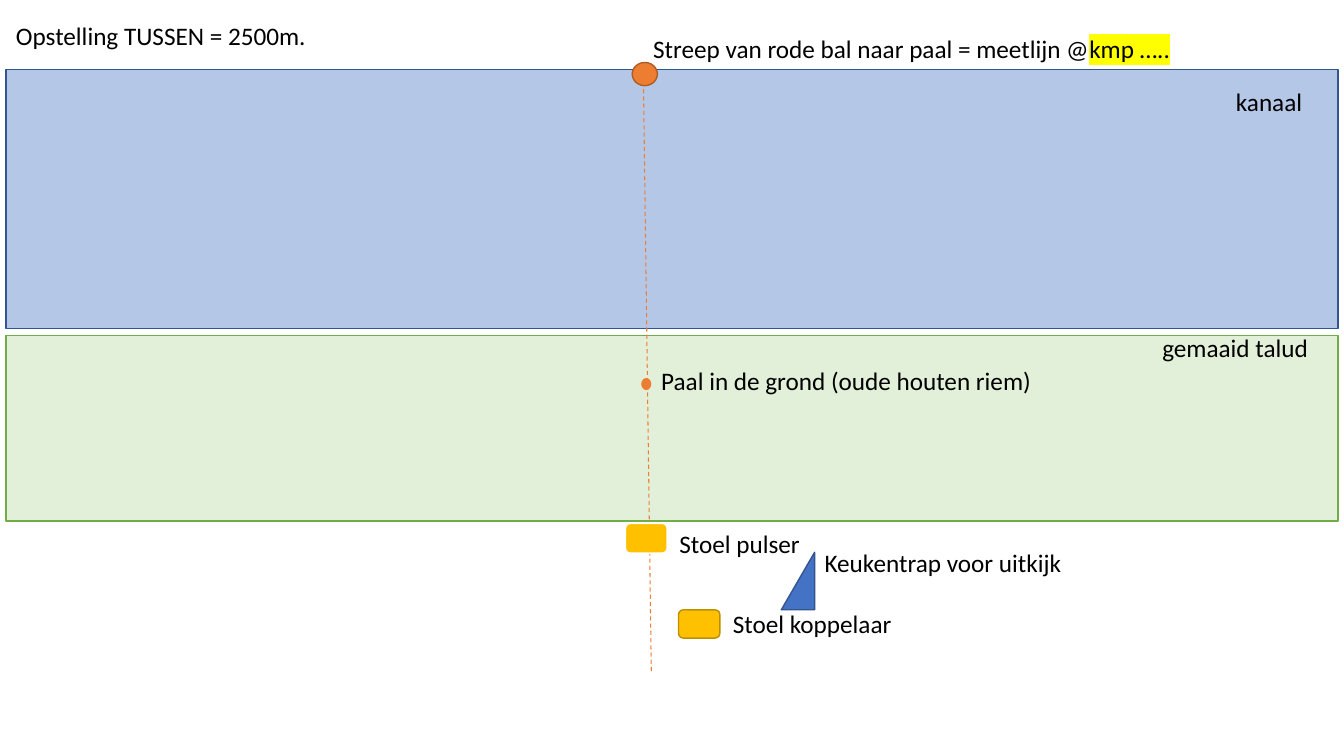
import pptx
import pptx.dml.color
import pptx.enum.dml
import pptx.enum.shapes
import pptx.enum.text
import pptx.oxml
import pptx.oxml.ns
import pptx.util
from pptx.util import Inches

COLORS = {
    "text": "000000",
    "highlight": "FFFF00",
    "bank": "E2F0D9",
    "bank_edge": "70AD47",
    "canal": "B4C7E7",
    "blue_edge": "325491",
    "ladder": "4472C4",
    "orange": "ED7D31",
    "orange_edge": "AF5C24",
    "chair": "FFC000",
    "chair_edge": "BD8E00",
    "white": "FFFFFF",
}
SHAPE = pptx.enum.shapes.MSO_SHAPE
A_NS = pptx.oxml.ns.nsdecls("a")


def rgb(name):
    return pptx.dml.color.RGBColor.from_string(COLORS[name])


def add_part(kind, box, fill, edge=None, width=1):
    part = slide.shapes.add_shape(kind, *map(Inches, box))
    part.shadow.inherit = False
    part.fill.solid()
    part.fill.fore_color.rgb = rgb(fill)
    if edge:
        part.line.color.rgb = rgb(edge)
        part.line.width = pptx.util.Pt(width)
    else:
        part.line.fill.background()
    return part


deck = pptx.Presentation()
deck.slide_width, deck.slide_height = Inches(13.33), Inches(7.5)
slide = deck.slides.add_slide(deck.slide_layouts[6])

# Bank and canal
add_part(SHAPE.RECTANGLE, (0.06, 3.33, 13.21, 1.84), "bank", "bank_edge")
add_part(SHAPE.RECTANGLE, (0.06, 0.69, 13.21, 2.57), "canal", "blue_edge")

# Measuring line from the ball past the pole
measuring_line = slide.shapes.add_connector(
    pptx.enum.shapes.MSO_CONNECTOR.STRAIGHT,
    Inches(6.38), Inches(0.67), Inches(6.46), Inches(6.68))
measuring_line.line.color.rgb = rgb("orange")
measuring_line.line.width = pptx.util.Pt(0.75)
measuring_line.line.dash_style = pptx.enum.dml.MSO_LINE.DASH
measuring_line._element.spPr.append(pptx.oxml.parse_xml(f"<a:effectLst {A_NS}/>"))

# Pole, chairs, ladder and ball
add_part(SHAPE.OVAL, (6.36, 3.75, 0.1, 0.12), "orange")
add_part(SHAPE.ROUNDED_RECTANGLE, (6.2, 5.19, 0.42, 0.3), "chair", "white", 1.5)
add_part(SHAPE.ROUNDED_RECTANGLE, (6.73, 6.05, 0.41, 0.28), "chair", "chair_edge")
ladder = add_part(SHAPE.RIGHT_TRIANGLE, (7.75, 5.48, 0.33, 0.57), "ladder", "blue_edge")
ladder._element.spPr.get_or_add_xfrm().set("flipH", "1")
add_part(SHAPE.OVAL, (6.27, 0.62, 0.25, 0.23), "orange", "orange_edge")

# Labels: left, top, width, plain text, highlighted text
labels = [
    (0.06, 0.15, 4.94, "Opstelling TUSSEN = 2500m.", ""),
    (12.16, 0.81, 1.01, "kanaal", ""),
    (6.38, 0.28, 5.39, "Streep van rode bal naar paal = meetlijn @", "kmp ….."),
    (11.43, 3.25, 1.74, "gemaaid talud", ""),
    (6.46, 3.58, 4.06, "Paal in de grond (oude houten riem)", ""),
    (6.64, 5.19, 5.5, "Stoel pulser", ""),
    (7.17, 5.99, 4.28, "Stoel koppelaar", ""),
    (8.08, 5.38, 2.61, "Keukentrap voor uitkijk", ""),
]
label_font = {"name": "Calibri", "size": pptx.util.Pt(18)}
for left, top, width, plain, marked in labels:
    label = slide.shapes.add_textbox(Inches(left), Inches(top), Inches(width), Inches(0.4))
    label.text_frame.word_wrap = True
    label.text_frame.auto_size = pptx.enum.text.MSO_AUTO_SIZE.SHAPE_TO_FIT_TEXT
    for words in filter(None, (plain, marked)):
        run = label.text_frame.paragraphs[0].add_run()
        run.text = words
        for attribute, value in label_font.items():
            setattr(run.font, attribute, value)
        run.font.color.rgb = rgb("text")
        if words == marked:
            highlight = pptx.oxml.parse_xml(
                f'<a:highlight {A_NS}><a:srgbClr val="{COLORS["highlight"]}"/></a:highlight>')
            run._r.rPr.find(pptx.oxml.ns.qn("a:solidFill")).addnext(highlight)

deck.save("out.pptx")
